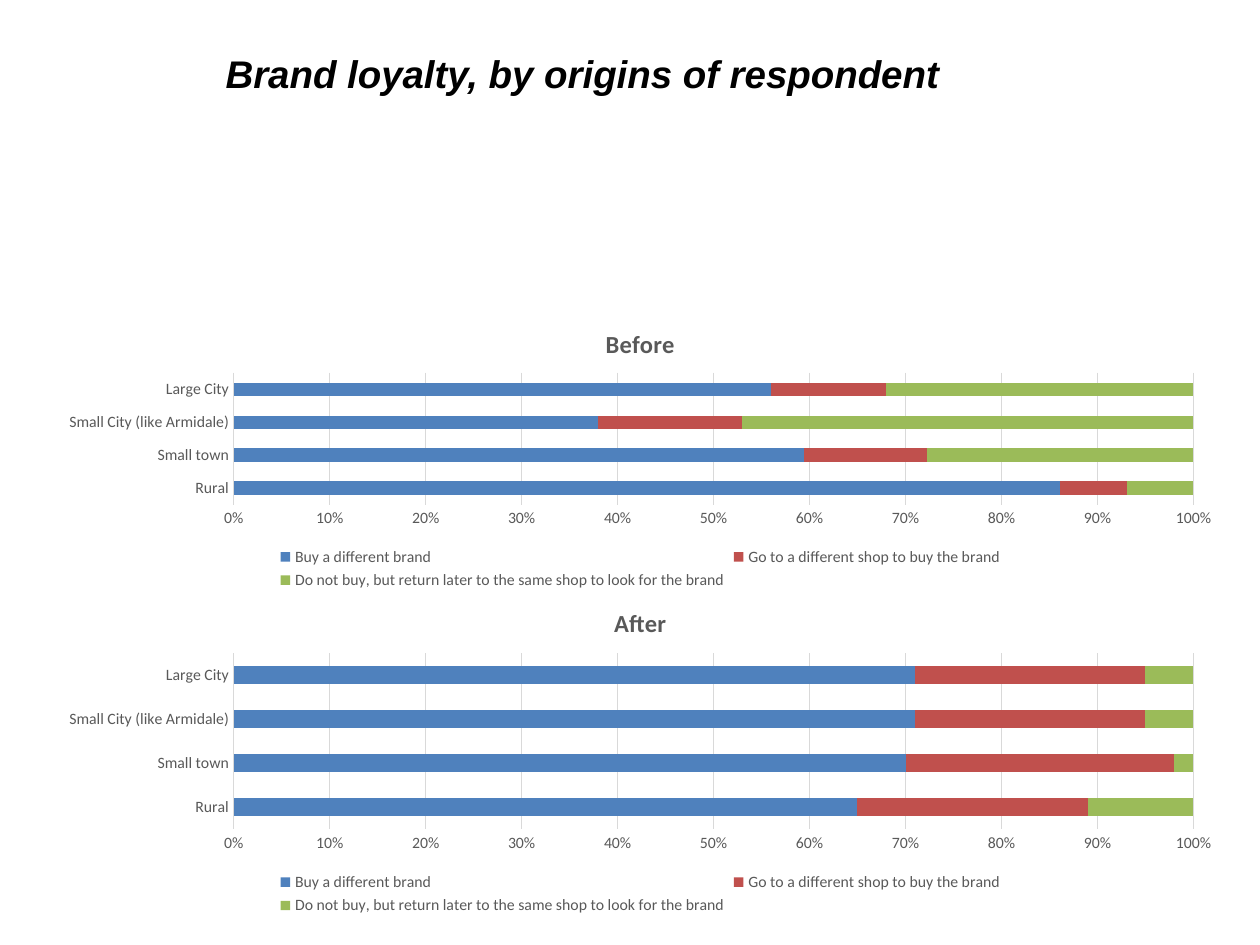
from pptx import Presentation
from pptx.chart.data import CategoryChartData
from pptx.dml.color import RGBColor
from pptx.enum.chart import XL_CHART_TYPE, XL_LEGEND_POSITION, XL_TICK_MARK
from pptx.enum.text import MSO_ANCHOR, MSO_AUTO_SIZE, PP_ALIGN
from pptx.util import Pt

BLACK = RGBColor(0, 0, 0)
GRAY = RGBColor(0x59, 0x59, 0x59)
LIGHT_GRAY = RGBColor(0xD9, 0xD9, 0xD9)
BLUE = RGBColor(0x4F, 0x81, 0xBD)
RED = RGBColor(0xC0, 0x50, 0x4D)
GREEN = RGBColor(0x9B, 0xBB, 0x59)

ORIGINS = ["Rural", "Small town", "Small City (like Armidale)", "Large City"]
RESPONSES = {
    "Buy a different brand": BLUE,
    "Go to a different shop to buy the brand": RED,
    "Do not buy, but return later to the same shop to look for the brand": GREEN,
}
BEFORE = [(87, 60, 38, 56), (7, 13, 15, 12), (7, 28, 47, 32)]
AFTER = [(65, 70, 71, 71), (24, 28, 24, 24), (11, 2, 5, 5)]

TITLE_FONT = {"name": "Arial", "size": Pt(22), "bold": True, "italic": True}
CHART_FONT = {"name": "Calibri", "size": Pt(10), "bold": False}
LABEL_FONT = {"name": "Calibri", "size": Pt(9), "bold": False}
HEADING_FONT = {"name": "Calibri", "size": Pt(14), "bold": True}


def set_attributes(target, values):
    for name, value in values.items():
        setattr(target, name, value)


def format_font(font, values, color):
    set_attributes(font, values)
    font.color.rgb = color


def format_line(line, color):
    line.color.rgb = color
    line.width = Pt(0.75)


def format_axis(axis):
    set_attributes(axis, {"major_tick_mark": XL_TICK_MARK.NONE,
                          "minor_tick_mark": XL_TICK_MARK.NONE})
    format_font(axis.tick_labels.font, LABEL_FONT, GRAY)


def add_title(slide, text):
    title = slide.shapes.title
    set_attributes(title, {"left": Pt(121.7), "top": Pt(25.2),
                           "width": Pt(428.4), "height": Pt(33.8)})
    frame = title.text_frame
    frame.text = text
    set_attributes(frame, {"word_wrap": False,
                           "auto_size": MSO_AUTO_SIZE.SHAPE_TO_FIT_TEXT,
                           "vertical_anchor": MSO_ANCHOR.TOP})
    paragraph = frame.paragraphs[0]
    paragraph.alignment = PP_ALIGN.LEFT
    format_font(paragraph.runs[0].font, TITLE_FONT, BLACK)


def add_loyalty_chart(slide, heading, values, top, height):
    data = CategoryChartData(number_format="0")
    data.categories = ORIGINS
    for response, shares in zip(RESPONSES, values):
        data.add_series(response, shares)
    chart = slide.shapes.add_chart(XL_CHART_TYPE.BAR_STACKED_100, Pt(26), top,
                                   Pt(679.7), height, data).chart
    format_font(chart.font, CHART_FONT, BLACK)

    chart.has_title = True
    frame = chart.chart_title.text_frame
    frame.text = heading
    format_font(frame.paragraphs[0].runs[0].font, HEADING_FONT, GRAY)
    chart.chart_title.include_in_layout = False

    plot = chart.plots[0]
    set_attributes(plot, {"gap_width": 150, "overlap": 100,
                          "vary_by_categories": False})
    for series, color in zip(plot.series, RESPONSES.values()):
        series.format.fill.solid()
        series.format.fill.fore_color.rgb = color

    format_axis(chart.category_axis)
    format_line(chart.category_axis.format.line, LIGHT_GRAY)
    value_axis = chart.value_axis
    format_axis(value_axis)
    value_axis.format.line.fill.background()
    value_axis.has_major_gridlines = True
    format_line(value_axis.major_gridlines.format.line, LIGHT_GRAY)
    set_attributes(value_axis.tick_labels, {"number_format": "0%",
                                            "number_format_is_linked": False})

    chart.has_legend = True
    set_attributes(chart.legend, {"position": XL_LEGEND_POSITION.BOTTOM,
                                  "include_in_layout": False})
    format_font(chart.legend.font, LABEL_FONT, GRAY)


def main():
    presentation = Presentation()
    set_attributes(presentation, {"slide_width": Pt(720), "slide_height": Pt(540)})
    slide = presentation.slides.add_slide(presentation.slide_layouts[5])
    add_loyalty_chart(slide, "Before", BEFORE, Pt(177), Pt(162.7))
    add_loyalty_chart(slide, "After", AFTER, Pt(336.2), Pt(189.4))
    add_title(slide, "Brand loyalty, by origins of respondent")
    presentation.save("out.pptx")


if __name__ == "__main__":
    main()
